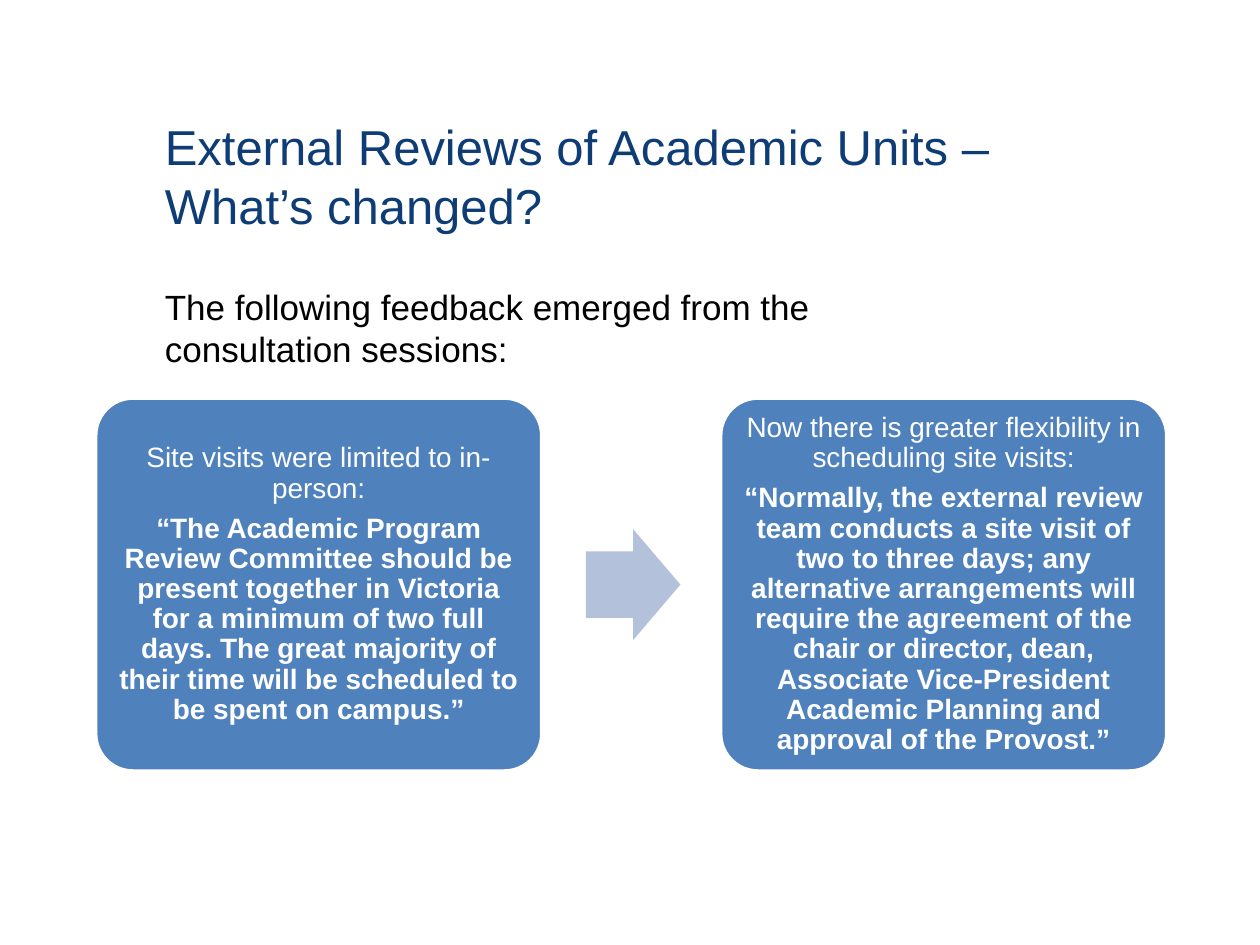
from pptx import Presentation
from pptx.dml.color import RGBColor
from pptx.enum import shapes, text
from pptx.util import Inches, Pt


def paint(color_format, value):
    color_format.rgb = RGBColor.from_string(value)


def style(para, size, color, bold=False):
    for span in para.runs:
        span.font.name = "Arial"
        span.font.size = Pt(size)
        span.font.bold = bold
        paint(span.font.color, color)


def add_text(page, box, wording, size, color, anchor):
    frame = page.shapes.add_textbox(*map(Inches, box)).text_frame
    frame.word_wrap = True
    frame.vertical_anchor = anchor
    frame.text = wording
    style(frame.paragraphs[0], size, color)


def add_block(page, box, kind, adjustments, color):
    block = page.shapes.add_shape(kind, *map(Inches, box))
    block.shadow.inherit = False
    for index, value in enumerate(adjustments):
        block.adjustments[index] = value
    block.fill.solid()
    paint(block.fill.fore_color, color)
    block.line.fill.background()
    return block


def add_card(page, box, heading, quote):
    card = add_block(page, box, shapes.MSO_SHAPE.ROUNDED_RECTANGLE, [0.1], "4F81BD")
    paint(card.line.color, "FFFFFF")
    card.line.width = Pt(2)
    frame = card.text_frame
    frame.word_wrap = True
    frame.vertical_anchor = text.MSO_ANCHOR.MIDDLE
    frame.margin_left = frame.margin_right = Inches(0.07)
    frame.margin_top = frame.margin_bottom = Inches(0.07)
    frame.text = f"{heading}\n{quote}"
    for para, bold in zip(frame.paragraphs, (False, True)):
        para.alignment = text.PP_ALIGN.CENTER
        para.line_spacing = 0.9
        para.space_after = Pt(5.6)
        style(para, 16, "FFFFFF", bold)


def add_comparison(page, box, before, after):
    left, top, width, height = box
    card_width = 3.54
    arrow_width, arrow_height = 0.75, 0.88
    add_card(page, (left, top, card_width, height), *before)
    arrow_box = (left + 3.89, top + (height - arrow_height) / 2, arrow_width, arrow_height)
    add_block(page, arrow_box, shapes.MSO_SHAPE.RIGHT_ARROW, [0.6, 0.5], "B3C1DB")
    add_card(page, (left + width - card_width, top, card_width, height), *after)


def main():
    deck = Presentation()
    deck.slide_width, deck.slide_height = Inches(10), Inches(7.5)
    page = deck.slides.add_slide(deck.slide_layouts[6])
    add_text(page, (1.21, 0.77, 6.85, 1.25),
             "External Reviews of Academic Units – What’s changed?",
             28, "0E3C75", text.MSO_ANCHOR.MIDDLE)
    add_text(page, (1.21, 2.22, 6.85, 0.85),
             "The following feedback emerged from the consultation sessions:",
             20, "000000", text.MSO_ANCHOR.TOP)
    add_comparison(
        page, (0.76, 3.16, 8.5, 2.96),
        ("Site visits were limited to in-person:",
         "“The Academic Program Review Committee should be present together in "
         "Victoria for a minimum of two full days. The great majority of their "
         "time will be scheduled to be spent on campus.”"),
        ("Now there is greater flexibility in scheduling site visits:",
         "“Normally, the external review team conducts a site visit of two to "
         "three days; any alternative arrangements will require the agreement of "
         "the chair or director, dean, Associate Vice-President Academic Planning "
         "and approval of the Provost.”"))
    deck.save("out.pptx")


if __name__ == "__main__":
    main()
